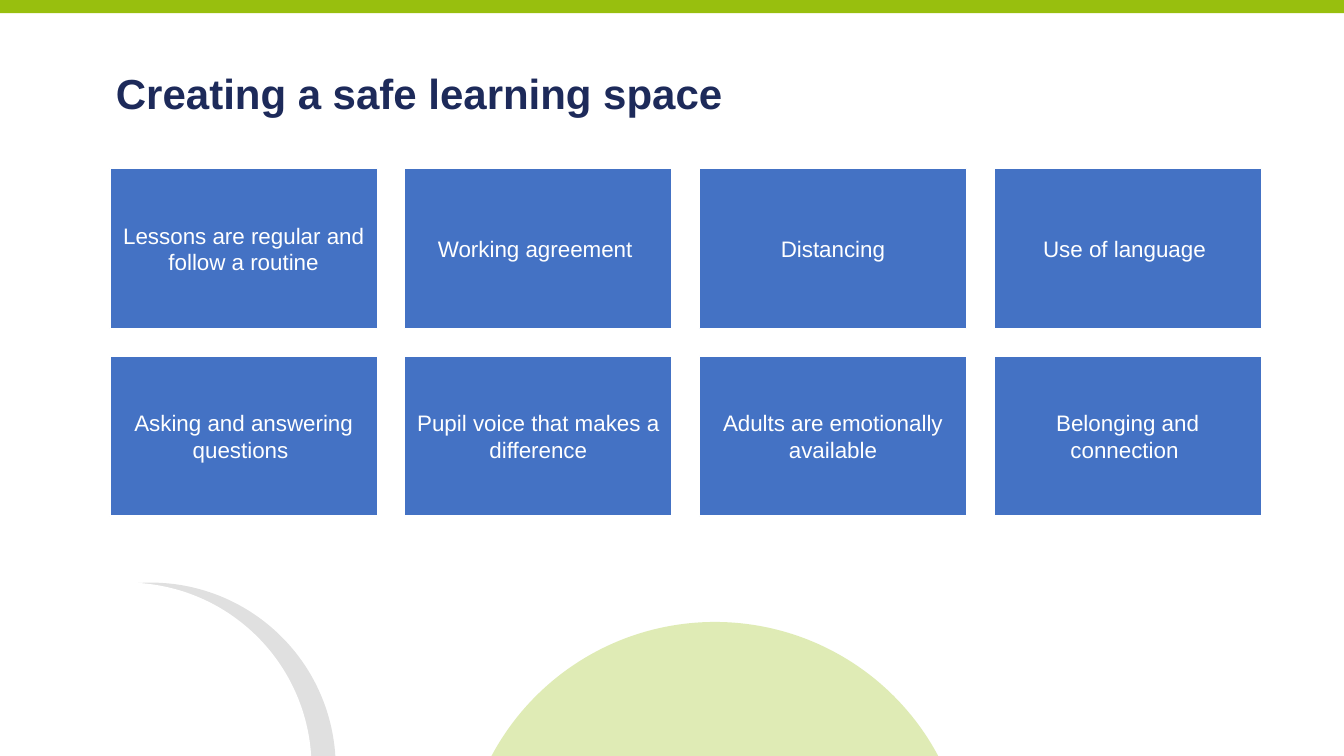
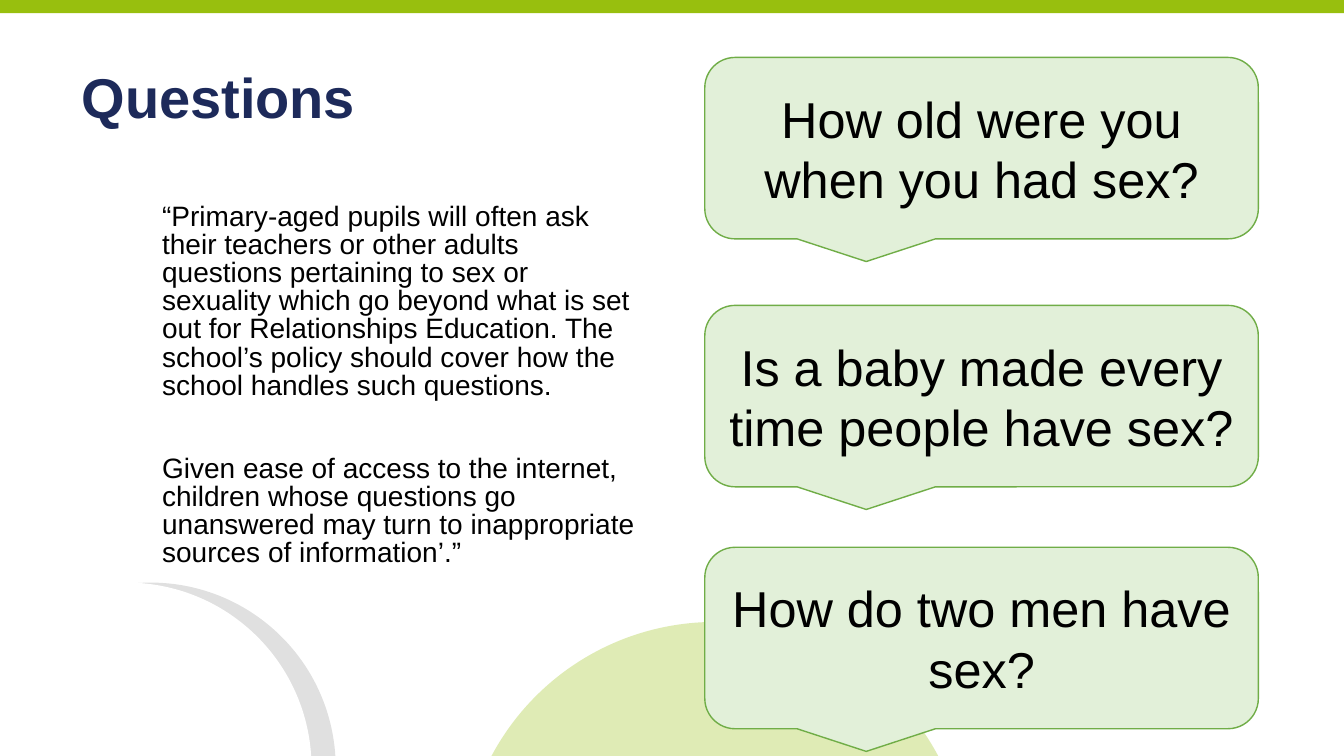
from lxml import etree
from pptx import Presentation
from pptx.dml.color import RGBColor
from pptx.enum.shapes import MSO_SHAPE
from pptx.enum.text import MSO_ANCHOR, PP_ALIGN
from pptx.oxml.ns import qn
from pptx.util import Inches, Pt

RECT = MSO_SHAPE.RECTANGLE
OVAL = MSO_SHAPE.OVAL
CALLOUT = MSO_SHAPE.ROUNDED_RECTANGULAR_CALLOUT
TOP, MIDDLE = MSO_ANCHOR.TOP, MSO_ANCHOR.MIDDLE
LEFT, CENTER = PP_ALIGN.LEFT, PP_ALIGN.CENTER

WIDTH, HEIGHT = 13.33, 7.5
FONT = "Arial"
COLORS = {
    "band": "98BF0E",
    "dome": "97BF0D",
    "title": "1D2A5A",
    "card": "4472C4",
    "bubble": "E2F0D9",
    "bubble_line": "70AD47",
    "black": "000000",
    "white": "FFFFFF",
}

CARDS = [
    "Lessons are regular and follow a routine",
    "Working agreement ",
    "Distancing",
    "Use of language ",
    "Asking and answering questions ",
    "Pupil voice that makes a difference",
    "Adults are emotionally available",
    "Belonging and connection ",
]
QUOTE = [
    "“Primary-aged pupils will often ask their teachers or other adults "
    "questions pertaining to sex or sexuality which go beyond what is set out "
    "for Relationships Education. The school’s policy should cover how the "
    "school handles such questions.",
    "Given ease of access to the internet, children whose questions go "
    "unanswered may turn to inappropriate sources of information’.”",
]
BUBBLES = [
    (0.57, "How old were you when you had sex?"),
    (3.03, "Is a baby made every time people have sex?"),
    (5.43, "How do two men have sex?"),
]


def color(name):
    return RGBColor.from_string(COLORS[name])


def add_shape(page, kind, box, fill, line=None, opacity=None):
    shape = page.shapes.add_shape(kind, *map(Inches, box))
    shape.shadow.inherit = False
    shape.fill.solid()
    shape.fill.fore_color.rgb = color(fill)
    if opacity is not None:
        rgb = shape.fill._xPr.find(".//" + qn("a:srgbClr"))
        etree.SubElement(rgb, qn("a:alpha"), val=str(opacity * 1000))
    if line:
        shape.line.color.rgb = color(line)
        shape.line.width = Pt(1)
    else:
        shape.line.fill.background()
    return shape


def write(shape, texts, size, ink, bold=False, align=LEFT, anchor=TOP,
          inset=0.1, spacing=None, gap=0):
    frame = shape.text_frame
    frame.word_wrap = True
    frame.vertical_anchor = anchor
    frame.margin_left = frame.margin_right = Inches(inset)
    frame.margin_top = frame.margin_bottom = Inches(min(inset, 0.05))
    for index, text in enumerate(texts):
        para = frame.add_paragraph() if index else frame.paragraphs[0]
        para.text = text
        para.alignment = align
        para.font.name = FONT
        para.font.size = Pt(size)
        para.font.bold = bold
        para.font.color.rgb = color(ink)
        if spacing:
            para.line_spacing = spacing
        if index:
            para.space_before = Pt(gap)


def add_text(page, box, texts, size, ink, **style):
    write(page.shapes.add_textbox(*map(Inches, box)), texts, size, ink, **style)


def start_page(deck, title, box, size, inset=0.1):
    """Blank page with the shared circles, top band and title."""
    page = deck.slides.add_slide(deck.slide_layouts[6])
    ring = 3.67
    add_shape(page, OVAL, (-0.34, 5.78, ring, ring), "black", opacity=12)
    add_shape(page, OVAL, (-0.58, 5.78, ring, ring), "white")
    add_shape(page, RECT, (0, 0, WIDTH, 0.13), "band")
    add_shape(page, OVAL, (4.58, 6.17, 5.02, 5.02), "dome", opacity=30)
    add_text(page, box, [title], size, "title", bold=True, inset=inset,
             spacing=0.9)
    return page


def add_cards(page, box, texts, columns=4, gap=0.27):
    """Grid of equal cards filling the box."""
    left, top, width, height = box
    rows = -(-len(texts) // columns)
    card_width = (width - gap * (columns - 1)) / columns
    card_height = (height - gap * (rows - 1)) / rows
    for index, text in enumerate(texts):
        row, column = divmod(index, columns)
        card = add_shape(page, RECT, (left + column * (card_width + gap),
                                      top + row * (card_height + gap),
                                      card_width, card_height),
                         "card", line="white")
        write(card, [text], 16, "white", align=CENTER, anchor=MIDDLE, inset=0.07)


def add_bubbles(page, left, width, height, bubbles):
    """Column of speech bubbles, each at its own top."""
    for top, text in bubbles:
        bubble = add_shape(page, CALLOUT, (left, top, width, height),
                           "bubble", line="bubble_line")
        write(bubble, [text], 36, "black", align=CENTER, anchor=MIDDLE)


def main():
    deck = Presentation()
    deck.slide_width, deck.slide_height = Inches(WIDTH), Inches(HEIGHT)

    # Safe learning space
    page = start_page(deck, "Creating a safe learning space",
                      (1.08, 0.68, 8.46, 1.09), 30, inset=0.07)
    add_cards(page, (1.09, 1.67, 11.42, 3.45), CARDS)

    # Questions
    page = start_page(deck, "Questions", (0.71, 0.65, 11.28, 1.09), 40)
    add_text(page, (1.51, 1.97, 4.96, 3.92), QUOTE, 20, "black",
             spacing=0.84, gap=39)
    add_bubbles(page, 6.99, 5.49, 1.8, BUBBLES)

    deck.save("out.pptx")


if __name__ == "__main__":
    main()
